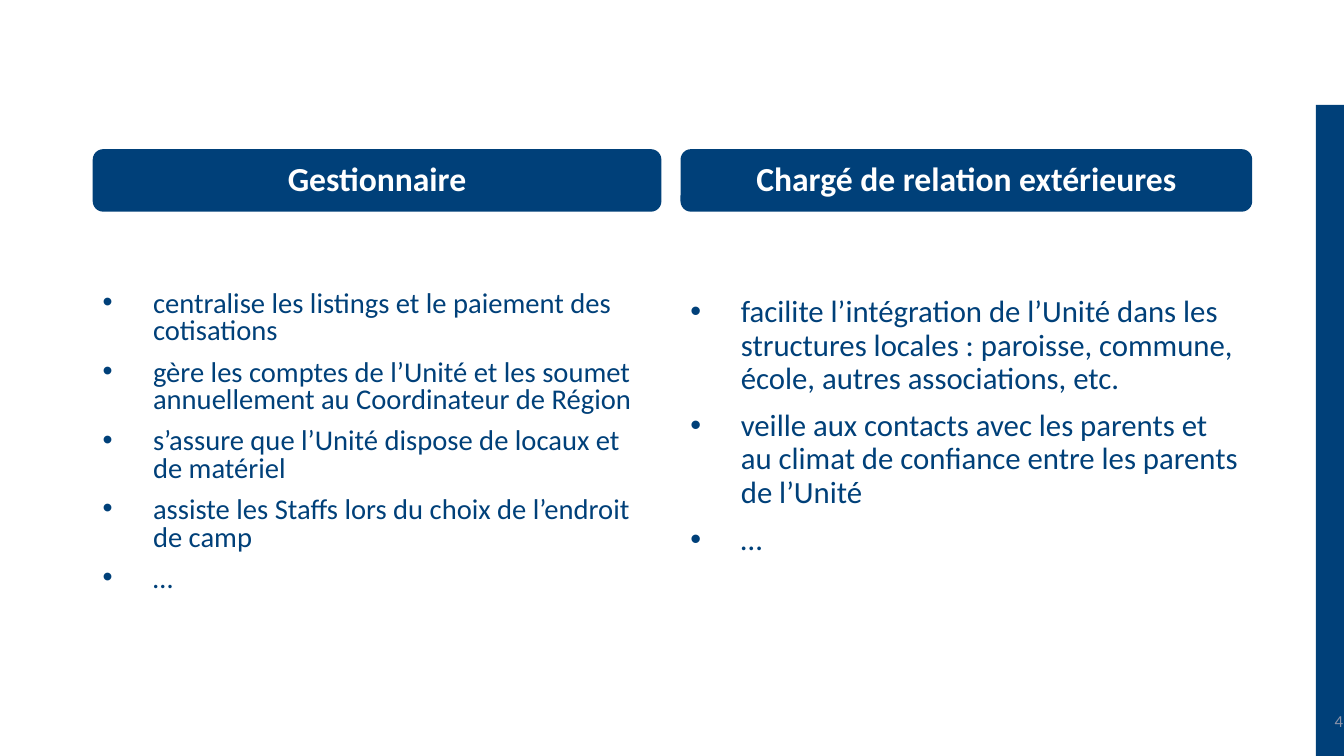
from dataclasses import dataclass

from lxml import etree
from pptx import Presentation
from pptx.dml.color import RGBColor
from pptx.enum.shapes import MSO_SHAPE
from pptx.enum.text import MSO_ANCHOR, PP_ALIGN
from pptx.oxml.ns import qn
from pptx.util import Inches, Pt

RECT, ROUNDED = MSO_SHAPE.RECTANGLE, MSO_SHAPE.ROUNDED_RECTANGLE
CENTER, RIGHT = PP_ALIGN.CENTER, PP_ALIGN.RIGHT
TOP, MIDDLE = MSO_ANCHOR.TOP, MSO_ANCHOR.MIDDLE
COLORS = {"navy": "004079", "white": "FFFFFF", "grey": "8C93A8"}
FONT = "Calibri"
HEADER_TOP, HEADER_HEIGHT = 1.48, 0.62
BODY_TOP, BODY_HEIGHT = 2.42, 3.6
INDENT = 0.5


@dataclass
class Role:
    """One column: a header bar above a bulleted list of duties."""
    title: str
    left: float
    width: float
    size: float
    line_spacing: float
    inset_top: float
    duties: list[str]


ROLES = [
    Role("Gestionnaire", 0.92, 5.64, 20.4, 0.8, 0.47, [
        "centralise les listings et le paiement des cotisations",
        "gère les comptes de l’Unité et les soumet annuellement au Coordinateur de Région",
        "s’assure que l’Unité dispose de locaux et de matériel",
        "assiste les Staffs lors du choix de l’endroit de camp",
        "…",
    ]),
    Role("Chargé de relation extérieures", 6.75, 5.67, 22, 0.9, 0.52, [
        "facilite l’intégration de l’Unité dans les structures locales : "
        "paroisse, commune, école, autres associations, etc.",
        "veille aux contacts avec les parents et au climat de confiance "
        "entre les parents de l’Unité",
        "…",
    ]),
]


def set_all(target, formats: dict) -> None:
    for name, value in formats.items():
        setattr(target, name, value)


def add_bar(slide, kind, left: float, top: float, width: float, height: float):
    """Add a plain navy shape."""
    sp = slide.shapes.add_shape(kind, Inches(left), Inches(top), Inches(width), Inches(height))
    sp.shadow.inherit = False
    sp.fill.solid()
    sp.fill.fore_color.rgb = RGBColor.from_string(COLORS["navy"])
    sp.line.fill.background()
    return sp


def add_text_box(slide, left: float, top: float, width: float, height: float, **frame):
    sp = slide.shapes.add_textbox(Inches(left), Inches(top), Inches(width), Inches(height))
    set_all(sp.text_frame, {"word_wrap": True, **frame})
    return sp


def write(p, text: str, size: float, color: str, bold: bool = False, **formats) -> None:
    set_all(p, formats)
    r = p.add_run()
    r.text = text
    set_all(r.font, {"name": FONT, "size": Pt(size), "bold": bold})
    r.font.color.rgb = RGBColor.from_string(COLORS[color])


def add_bullet(p) -> None:
    pPr = p._p.get_or_add_pPr()
    pPr.set("marL", str(Inches(INDENT)))
    pPr.set("indent", str(-Inches(INDENT)))
    etree.SubElement(pPr, qn("a:buFont"), typeface="Arial")
    etree.SubElement(pPr, qn("a:buChar"), char="•")


def add_role(slide, role: Role) -> None:
    header = add_bar(slide, ROUNDED, role.left, HEADER_TOP, role.width, HEADER_HEIGHT)
    tf = header.text_frame
    set_all(tf, {"word_wrap": True, "vertical_anchor": MIDDLE})
    write(tf.paragraphs[0], role.title, 24, "white", True, alignment=CENTER, line_spacing=0.9)

    body = add_text_box(slide, role.left, BODY_TOP, role.width, BODY_HEIGHT,
                        vertical_anchor=TOP, margin_top=Inches(role.inset_top))
    tf = body.text_frame
    for i, duty in enumerate(role.duties):
        p = tf.add_paragraph() if i else tf.paragraphs[0]
        add_bullet(p)
        write(p, duty, role.size, "navy", line_spacing=role.line_spacing,
              space_before=Pt(10 if i else 0))


def main() -> None:
    prs = Presentation()
    set_all(prs, {"slide_width": Inches(13.33), "slide_height": Inches(7.5)})
    slide = prs.slides.add_slide(prs.slide_layouts[6])
    add_bar(slide, RECT, 13.05, 1.04, 0.28, 6.46)
    for role in ROLES:
        add_role(slide, role)
    number = add_text_box(slide, 10.42, 6.95, 2.91, 0.4,
                          vertical_anchor=MIDDLE, margin_right=Inches(0.01))
    write(number.text_frame.paragraphs[0], "4", 12, "grey", alignment=RIGHT)
    prs.save("out.pptx")


if __name__ == "__main__":
    main()
